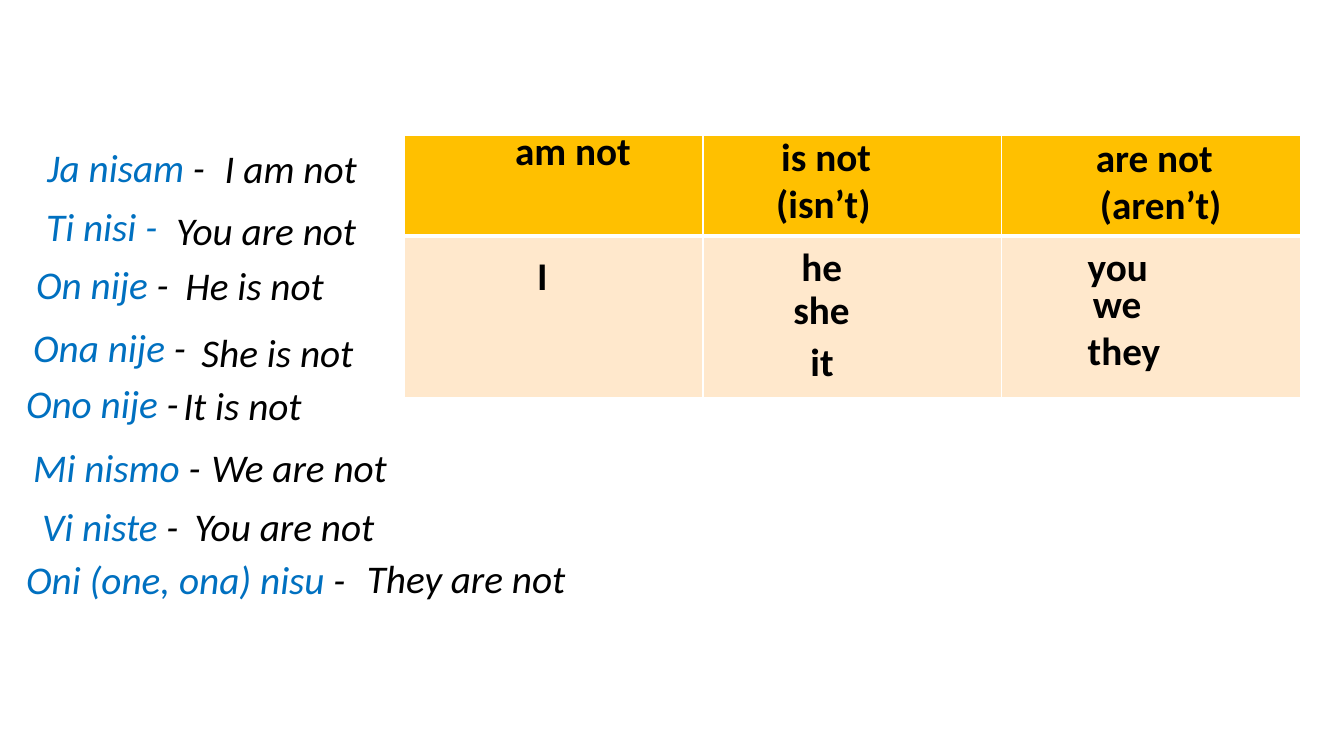
import dataclasses

import pptx
import pptx.dml.color
import pptx.enum.text
import pptx.oxml
import pptx.oxml.ns
import pptx.util


@dataclasses.dataclass(frozen=True)
class Theme:
    font: str = "Calibri"
    size: int = 28
    text: str = "000000"
    serbian: str = "0070C0"
    header: str = "FFC000"
    body: str = "FFE8CC"
    border: str = "FFFFFF"
    thin: int = 1
    thick: int = 3


COLUMNS, ROWS = 13.33, 7.5  # grid of one-inch columns and rows
LINE = 0.57  # rows taken by one line of text
INDENT = 0.23

# Serbian, its dash, dash colour, left, top, width; English, left, top, width
TRANSLATIONS = [
    (("Ja nisam ", "-", 0.37, 1.37, 1.83), ("I am not", 2.13, 1.38, 1.65)),
    (("Ti nisi -", "", 0.36, 1.96, 1.59), ("You are not", 1.65, 2.0, 2.07)),
    (("On nije ", "-", 0.26, 2.53, 1.63), ("He is not", 1.74, 2.54, 1.79)),
    (("Ona nije ", "-", 0.23, 3.16, 1.9), ("She is not", 1.9, 3.21, 1.92)),
    (("Ono nije ", "-", 0.16, 3.71, 1.74), ("It is not", 1.72, 3.73, 1.95)),
    (("Mi nismo ", "-", 0.23, 4.35, 1.9), ("We are not", 2.0, 4.35, 2.02)),
    (("Vi niste ", "-", 0.32, 4.93, 1.58), ("You are not", 1.83, 4.93, 2.13)),
    (("Oni (one, ona) nisu ", "-", 0.16, 5.46, 3.38), ("They are not", 3.54, 5.45, 2.42)),
]

# Lines as (text, indent), then left, top, width, height
HEADINGS = [
    ([("am not", INDENT)], 4.78, 1.2, 1.95, 0.88),
    ([("is not", INDENT), ("(isn’t)", 0.18)], 7.42, 1.26, 1.65, 1.04),
    ([("are not", INDENT), ("(aren’t)", 0.27)], 10.54, 1.27, 1.96, 1.04),
]

PRONOUNS = [
    ("I", 5.0, 2.44),
    ("he", 7.62, 2.35),
    ("she", 7.54, 2.78),
    ("it", 7.71, 3.3),
    ("you", 10.46, 2.35),
    ("we", 10.51, 2.72),
    ("they", 10.46, 3.19),
]


class SlideBuilder:
    def __init__(self, presentation, theme):
        self.theme = theme
        self.column = presentation.slide_width / COLUMNS
        self.row = presentation.slide_height / ROWS
        self.slide = presentation.slides.add_slide(presentation.slide_layouts[6])

    def place(self, left, top, width, height):
        """Turn grid lengths into slide lengths."""
        return (round(left * self.column), round(top * self.row),
                round(width * self.column), round(height * self.row))

    def text(self, lines, left, top, width, height=LINE, bold=False, italic=False):
        """Add a box; each line is (indent, [(text, colour), ...])."""
        box = self.slide.shapes.add_textbox(*self.place(left, top, width, height))
        frame = box.text_frame
        frame.word_wrap = True
        frame.auto_size = pptx.enum.text.MSO_AUTO_SIZE.SHAPE_TO_FIT_TEXT
        for number, (indent, runs) in enumerate(lines):
            paragraph = frame.add_paragraph() if number else frame.paragraphs[0]
            if indent:
                paragraph._p.get_or_add_pPr().set("marL", str(round(indent * self.column)))
            paragraph.font.name = self.theme.font
            paragraph.font.size = pptx.util.Pt(self.theme.size)
            paragraph.font.bold = bold
            paragraph.font.italic = italic
            for words, colour in runs:
                run = paragraph.add_run()
                run.text = words
                run.font.color.rgb = pptx.dml.color.RGBColor.from_string(colour)

    def border(self, cell, side, width):
        properties = cell._tc.get_or_add_tcPr()
        line = pptx.oxml.parse_xml(
            f'<a:{side} {pptx.oxml.ns.nsdecls("a")} w="{pptx.util.Pt(width)}"><a:solidFill>'
            f'<a:srgbClr val="{self.theme.border}"/></a:solidFill></a:{side}>')
        properties.append(line)

    def table(self, left, top, width, row_heights, fills, columns):
        """Add an empty table with one fill per row."""
        frame = self.slide.shapes.add_table(
            len(fills), columns, *self.place(left, top, width, sum(row_heights)))
        table = frame.table
        for index, (height, fill) in enumerate(zip(row_heights, fills)):
            table.rows[index].height = round(height * self.row)
            above = self.theme.thick if index == 1 else self.theme.thin
            below = self.theme.thick if index == 0 else self.theme.thin
            for cell in table.rows[index].cells:
                for side, line_width in (("lnL", self.theme.thin), ("lnR", self.theme.thin),
                                         ("lnT", above), ("lnB", below)):
                    self.border(cell, side, line_width)
                cell.fill.solid()
                cell.fill.fore_color.rgb = pptx.dml.color.RGBColor.from_string(fill)


def main():
    presentation = pptx.Presentation()
    presentation.slide_width = pptx.util.Inches(COLUMNS)
    presentation.slide_height = pptx.util.Inches(ROWS)
    theme = Theme()
    builder = SlideBuilder(presentation, theme)

    builder.table(4.01, 1.34, 8.89, (1.0, 1.6), (theme.header, theme.body), columns=3)
    for lines, *position in HEADINGS:
        builder.text([(indent, [(words, theme.text)]) for words, indent in lines],
                     *position, bold=True)
    for pronoun, left, top in PRONOUNS:
        builder.text([(INDENT, [(pronoun, theme.text)])], left, top, 1.65, bold=True)

    for (serbian, dash, *serbian_position), (english, *english_position) in TRANSLATIONS:
        runs = [(serbian, theme.serbian)]
        if dash:
            runs.append((dash, theme.text))
        builder.text([(0, runs)], *serbian_position, italic=True)
        builder.text([(0, [(english, theme.text)])], *english_position, italic=True)

    presentation.save("out.pptx")


if __name__ == "__main__":
    main()
